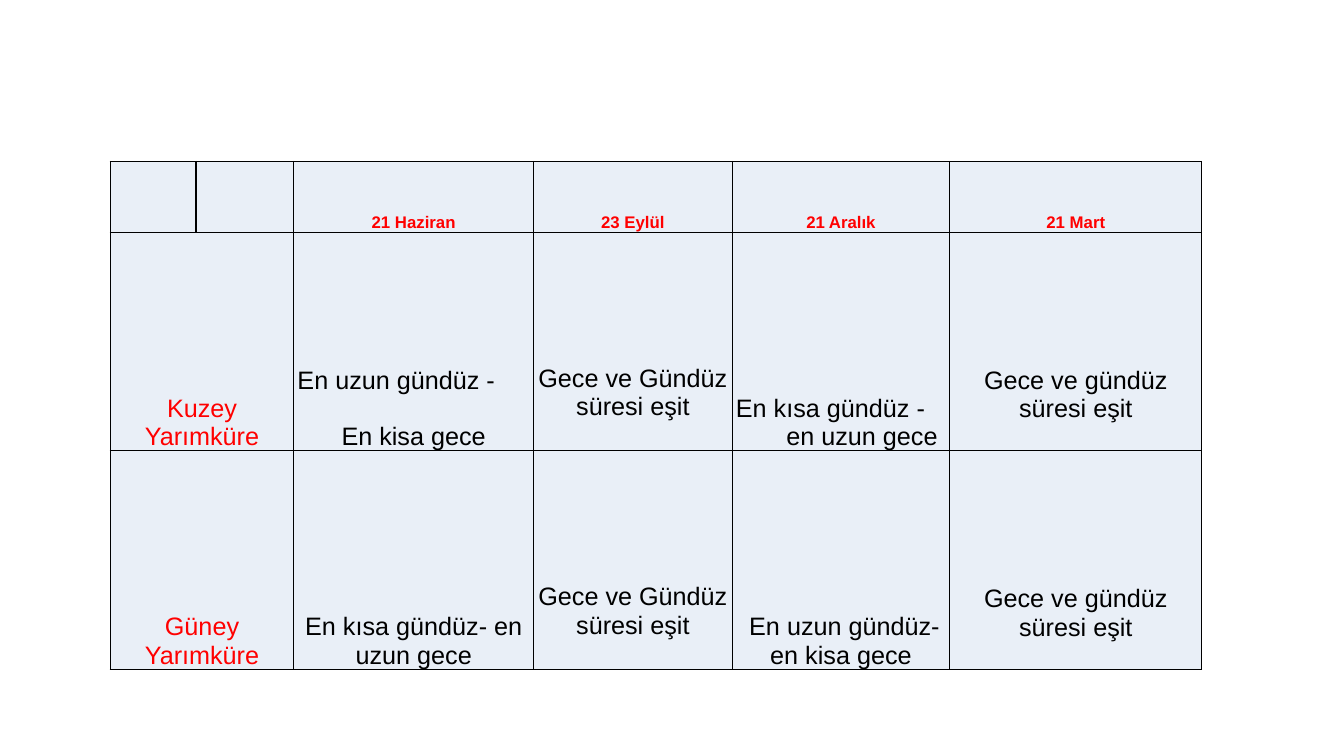
from dataclasses import dataclass

from lxml.etree import SubElement
from pptx import Presentation
from pptx.dml.color import RGBColor
from pptx.enum.text import MSO_ANCHOR, PP_ALIGN
from pptx.oxml.ns import qn
from pptx.table import _Cell
from pptx.util import Pt

HUES = {"fill": "E9EFF7", "line": "000000", "text": "000000", "head": "FF0000"}
WIDTHS = [61.2, 69.8, 171.4, 141.8, 155.5, 180]
HEIGHTS = [50.4, 156.2, 156.2]
LEFT, TOP = 78.8, 115.4
EDGE = 0.7


@dataclass
class Entry:
    row: int
    col: int
    lines: tuple[str, ...]
    size: float = 18
    hue: str = "text"
    bold: bool = False
    lift: float = 0
    gap: float = 0
    inset: float = 0
    shift: float = 0
    flush: bool = False


DATES = ["21 Haziran", "23 Eylül", "21 Aralık", "21 Mart"]
HALVES = ["Kuzey Yarımküre", "Güney Yarımküre"]
EQUAL = [(3, "Gece ve Gündüz süresi eşit", 21.4), (5, "Gece ve gündüz süresi eşit", 20)]

ENTRIES = [
    *(Entry(0, col, (date,), size=12, hue="head", bold=True)
      for col, date in enumerate(DATES, 2)),
    *(Entry(row, 0, (half,), hue="head") for row, half in enumerate(HALVES, 1)),
    *(Entry(row, col, (text,), lift=lift) for row in (1, 2) for col, text, lift in EQUAL),
    Entry(1, 2, ("En uzun gündüz -", "En kisa gece"), gap=20, inset=2, flush=True),
    Entry(1, 4, ("En kısa gündüz - en uzun gece",), inset=38, shift=-36, flush=True),
    Entry(2, 2, ("En kısa gündüz- en uzun gece",)),
    Entry(2, 4, ("En uzun gündüz-en kisa gece",), shift=5),
]


def paint(cell: _Cell) -> None:
    props = cell._tc.get_or_add_tcPr()
    for side in ("L", "R", "T", "B"):
        line = SubElement(props, qn(f"a:ln{side}"), w=str(Pt(1)))
        fill = SubElement(line, qn("a:solidFill"))
        SubElement(fill, qn("a:srgbClr"), val=HUES["line"])
    cell.fill.solid()
    cell.fill.fore_color.rgb = RGBColor.from_string(HUES["fill"])
    cell.vertical_anchor = MSO_ANCHOR.BOTTOM
    cell.margin_left = cell.margin_right = cell.margin_top = Pt(EDGE)
    cell.margin_bottom = Pt(0)


def write(cell: _Cell, lines: tuple[str, ...], *, size: float, hue: str, bold: bool,
          lift: float, gap: float, inset: float, shift: float, flush: bool) -> None:
    cell.margin_bottom = Pt(lift)
    frame = cell.text_frame
    for index, text in enumerate(lines):
        para = frame.add_paragraph() if index else frame.paragraphs[0]
        first = index == 0
        para.alignment = PP_ALIGN.LEFT if flush and first else PP_ALIGN.CENTER
        if first:
            props = para._p.get_or_add_pPr()
            props.set("marL", str(Pt(inset)))
            props.set("indent", str(Pt(shift)))
        else:
            para.space_before = Pt(gap)
        run = para.add_run()
        run.text = text
        font = run.font
        font.name, font.size, font.bold = "Arial", Pt(size), bold
        font.color.rgb = RGBColor.from_string(HUES[hue])


def main() -> None:
    deck = Presentation()
    deck.slide_width, deck.slide_height = Pt(960), Pt(540)
    slide = deck.slides.add_slide(deck.slide_layouts[6])
    grid = slide.shapes.add_table(
        len(HEIGHTS), len(WIDTHS), Pt(LEFT), Pt(TOP), Pt(sum(WIDTHS)), Pt(sum(HEIGHTS))
    ).table
    grid.first_row = grid.horz_banding = False
    for col, width in zip(grid.columns, WIDTHS):
        col.width = Pt(width)
    for row, height in zip(grid.rows, HEIGHTS):
        row.height = Pt(height)
    for cell in grid.iter_cells():
        paint(cell)
    for row in (1, 2):
        grid.cell(row, 0).merge(grid.cell(row, 1))
    for item in ENTRIES:
        write(grid.cell(item.row, item.col), item.lines, size=item.size, hue=item.hue,
              bold=item.bold, lift=item.lift, gap=item.gap, inset=item.inset,
              shift=item.shift, flush=item.flush)
    deck.save("out.pptx")


if __name__ == "__main__":
    main()
